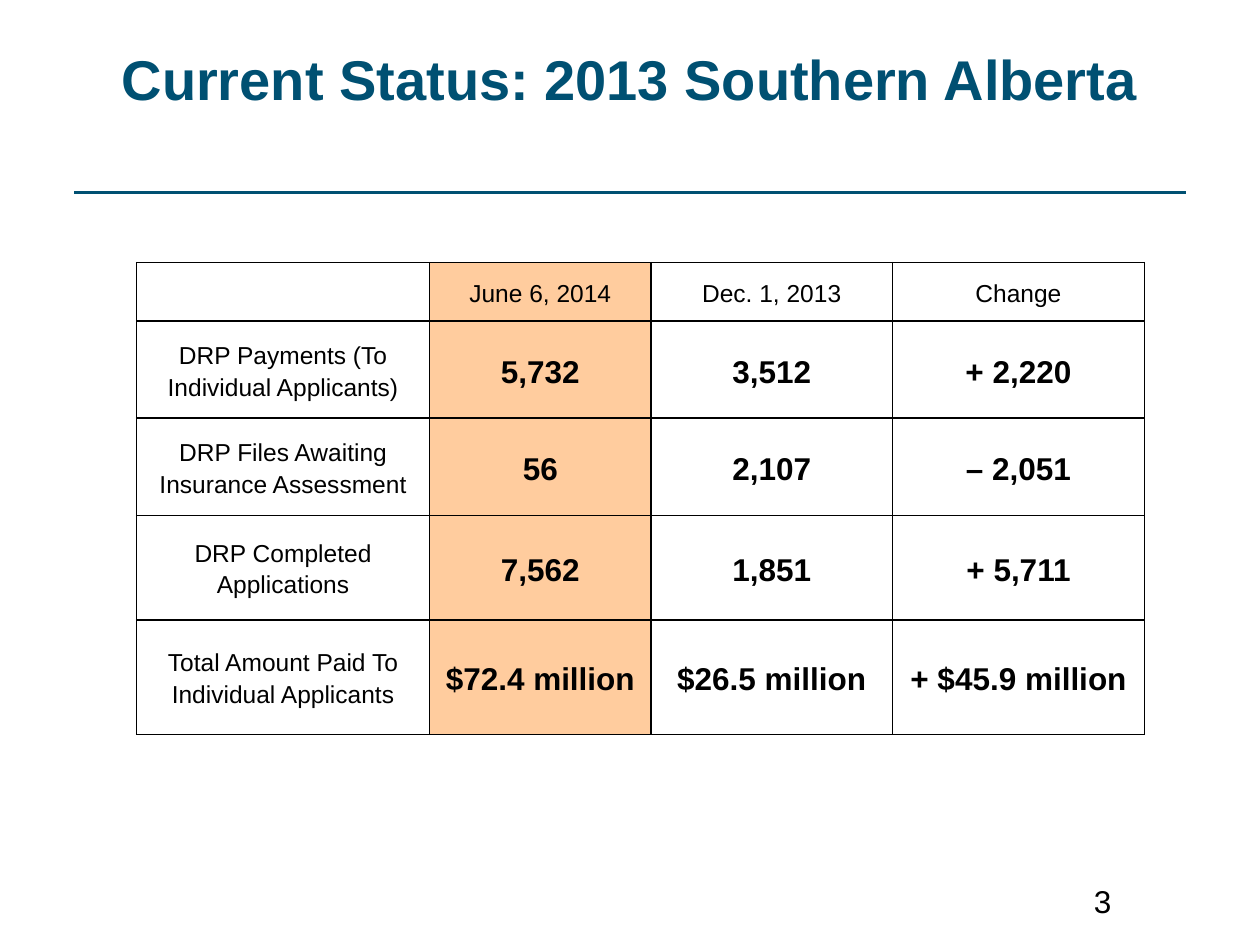
"""Build the current status slide with its table of relief figures."""
from copy import deepcopy
from dataclasses import dataclass

from lxml import etree
from pptx import Presentation
from pptx.dml.color import RGBColor as Rgb
from pptx.enum import shapes, text
from pptx.oxml import ns
from pptx.util import Pt


@dataclass(frozen=True)
class Theme:
    """Hold the colours and type sizes."""
    font: str = "Arial"
    teal: str = "005072"
    black: str = "000000"
    tint: str = "FF7900"
    alpha: int = 38
    title: int = 32
    value: int = 18
    label: int = 14


THEME = Theme()
COLS = (167.5, 126.5, 138, 144)
ROWS = (33.5, 55.5, 55.5, 59.75, 65.5)
DATA = (
    ("", "June 6, 2014", "Dec. 1, 2013", "Change"),
    ("DRP Payments (To Individual Applicants)", "5,732", "3,512", "+ 2,220"),
    ("DRP Files Awaiting Insurance Assessment", "56", "2,107", "– 2,051"),
    ("DRP Completed Applications", "7,562", "1,851", "+ 5,711"),
    ("Total Amount Paid To\vIndividual Applicants",
     "$72.4 million", "$26.5 million", "+ $45.9 million"),
)


def apply(item, form):
    """Set each attribute named in the format dict."""
    for name, value in form.items():
        setattr(item, name, value)


def write(para, words, size, color=THEME.black, bold=False):
    """Write words into a paragraph in one style."""
    para.text = words
    for run in para.runs:
        apply(run.font, {"name": THEME.font, "size": Pt(size), "bold": bold})
        run.font.color.rgb = Rgb.from_string(color)
    for mark in para._p.findall(ns.qn("a:br")):
        mark.append(deepcopy(para.runs[0]._r.rPr))


def add_text(slide, box, words, size, **style):
    """Add a wrapping text box and return its paragraph."""
    frame = slide.shapes.add_textbox(*map(Pt, box)).text_frame
    frame.word_wrap = True
    para = frame.paragraphs[0]
    write(para, words, size, **style)
    return para


def add_rule(slide, left, right, top):
    """Add the level line below the title."""
    line = slide.shapes.add_connector(
        shapes.MSO_CONNECTOR.STRAIGHT, Pt(left), Pt(top), Pt(right), Pt(top))
    line.line.width = Pt(1.5)
    line.line.color.rgb = Rgb.from_string(THEME.teal)
    etree.SubElement(line._element.spPr, ns.qn("a:effectLst"))


def add_edges(cell):
    """Draw a thin black border on all four sides of a cell."""
    props = cell._tc.get_or_add_tcPr()
    for side in ("lnL", "lnR", "lnT", "lnB"):
        edge = etree.SubElement(props, ns.qn(f"a:{side}"), w=str(Pt(1)))
        fill = etree.SubElement(edge, ns.qn("a:solidFill"))
        etree.SubElement(fill, ns.qn("a:srgbClr"), val=THEME.black)


def fill_cell(cell, words, head, col):
    """Style one cell by its place in the table."""
    apply(cell, {"margin_left": Pt(5), "margin_right": Pt(5),
                 "margin_top": 0, "margin_bottom": 0,
                 "vertical_anchor": text.MSO_ANCHOR.MIDDLE})
    para = cell.text_frame.paragraphs[0]
    apply(para, {"alignment": text.PP_ALIGN.CENTER, "line_spacing": 1.15})
    strong = not head and col > 0
    write(para, words, THEME.value if strong else THEME.label, bold=strong)
    add_edges(cell)
    if col != 1:
        cell.fill.background()
        return
    cell.fill.solid()
    cell.fill.fore_color.rgb = Rgb.from_string(THEME.tint)
    tone = cell._tc.tcPr.find(f"{ns.qn('a:solidFill')}/{ns.qn('a:srgbClr')}")
    etree.SubElement(tone, ns.qn("a:alpha"), val=str(THEME.alpha * 1000))


def add_grid(slide, left, top):
    """Add the table of figures."""
    table = slide.shapes.add_table(
        len(ROWS), len(COLS), Pt(left), Pt(top),
        Pt(sum(COLS)), Pt(sum(ROWS))).table
    apply(table, {"first_row": False, "horz_banding": False})
    for col, width in zip(table.columns, COLS):
        col.width = Pt(width)
    for row, height in zip(table.rows, ROWS):
        row.height = Pt(height)
    for r, line in enumerate(DATA):
        for c, words in enumerate(line):
            fill_cell(table.cell(r, c), words, r == 0, c)


def main():
    """Build and save the slide."""
    deck = Presentation()
    apply(deck, {"slide_width": Pt(720), "slide_height": Pt(540)})
    slide = deck.slides.add_slide(deck.slide_layouts[6])
    add_rule(slide, 42.5, 677.5, 110)
    title = add_text(slide, (36, 21.6, 648, 90),
                     "Current Status: 2013 Southern Alberta",
                     THEME.title, color=THEME.teal, bold=True)
    title.alignment = text.PP_ALIGN.CENTER
    add_text(slide, (618, 500.5, 84, 29), "3", THEME.value)
    add_grid(slide, 78, 150)
    deck.save("out.pptx")


if __name__ == "__main__":
    main()
